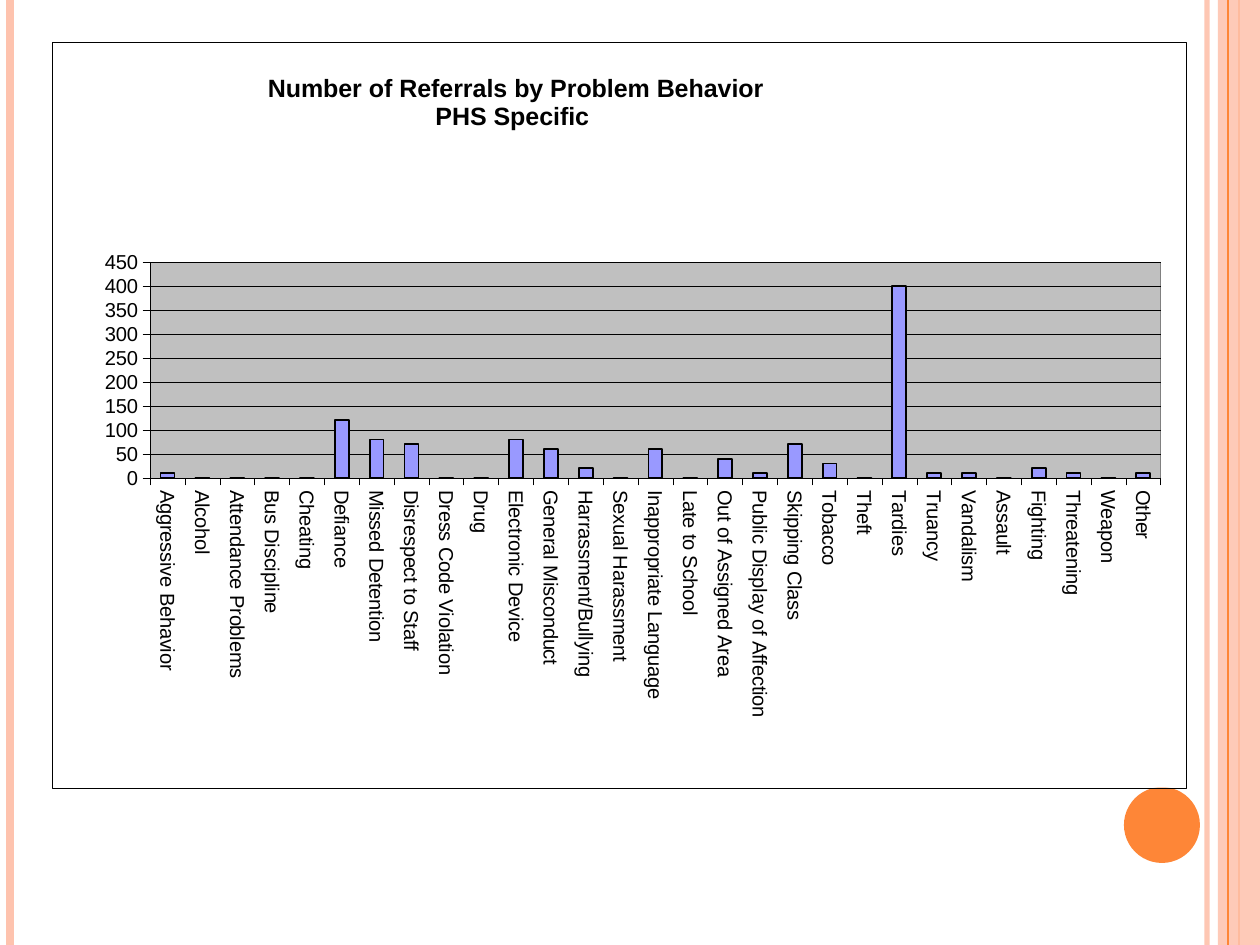
from lxml import etree
from pptx import Presentation
from pptx.chart.data import CategoryChartData
from pptx.dml.color import RGBColor
from pptx.enum.chart import XL_CHART_TYPE, XL_TICK_MARK
from pptx.enum.shapes import MSO_CONNECTOR, MSO_SHAPE
from pptx.enum.text import PP_ALIGN
from pptx.oxml import parse_xml
from pptx.oxml.ns import nsdecls, qn
from pptx.util import Pt

PX = 914400 / 126
WIDTH, HEIGHT = 1260, 945
CHART_W, CHART_H = 1134, 746
FONT = "Arial"
COLORS = {"peach": "FEC3AE", "orange": "FE8637", "black": "000000", "white": "FFFFFF",
          "plot": "C0C0C0", "plot_edge": "808080", "bar": "9999FF"}

REFERRALS = [
    ("Aggressive Behavior", 10), ("Alcohol", 0), ("Attendance Problems", 0),
    ("Bus Discipline", 0), ("Cheating", 0), ("Defiance", 120),
    ("Missed Detention", 80), ("Disrespect to Staff", 70),
    ("Dress Code Violation", 0), ("Drug", 0), ("Electronic Device", 80),
    ("General Misconduct", 60), ("Harrassment/Bullying", 20),
    ("Sexual Harassment", 0), ("Inappropriate Language", 60),
    ("Late to School", 0), ("Out of Assigned Area", 40),
    ("Public Display of Affection", 10), ("Skipping Class", 70),
    ("Tobacco", 30), ("Theft", 0), ("Tardies", 400), ("Truancy", 10),
    ("Vandalism", 10), ("Assault", 0), ("Fighting", 20), ("Threatening", 10),
    ("Weapon ", 0), ("Other", 10),
]


def px(n):
    return round(n * PX)


def rgb(name):
    return RGBColor.from_string(COLORS[name])


def set_alpha(fill_element, percent):
    color = fill_element.find(".//" + qn("a:srgbClr"))
    etree.SubElement(color, qn("a:alpha")).set("val", str(percent * 1000))


def add_stripe(slide, x, color, width, alpha=100):
    """Full-height vertical line."""
    c = slide.shapes.add_connector(MSO_CONNECTOR.STRAIGHT, px(x), 0, px(x), px(HEIGHT))
    c.line.color.rgb = rgb(color)
    c.line.width = Pt(width)
    sp_pr = c._element.spPr
    etree.SubElement(sp_pr, qn("a:effectLst"))
    if alpha < 100:
        set_alpha(sp_pr, alpha)


def add_filled(slide, kind, x, y, w, h, color, alpha=100):
    sp = slide.shapes.add_shape(kind, px(x), px(y), px(w), px(h))
    sp.shadow.inherit = False
    sp.fill.solid()
    sp.fill.fore_color.rgb = rgb(color)
    sp.line.fill.background()
    if alpha < 100:
        set_alpha(sp._element.spPr, alpha)


def style_line(line, color, width):
    line.color.rgb = rgb(color)
    line.width = Pt(width)


def style_font(font, size, bold=False):
    font.name = FONT
    font.size = Pt(size)
    font.bold = bold
    font.color.rgb = rgb("black")


def area_format(fill, border):
    """Fill and thin border for the chart area or the plot area."""
    return parse_xml(
        f'<c:spPr {nsdecls("c", "a")}>'
        f'<a:solidFill><a:srgbClr val="{COLORS[fill]}"/></a:solidFill>'
        f'<a:ln w="3175"><a:solidFill><a:srgbClr val="{COLORS[border]}"/></a:solidFill></a:ln>'
        '</c:spPr>')


def manual_layout(x, y, w=None, h=None):
    """Place a chart part, given in px from the chart's corner."""
    target = '<c:layoutTarget val="inner"/>' if w else ""
    size = f'<c:w val="{w / CHART_W}"/><c:h val="{h / CHART_H}"/>' if w else ""
    return parse_xml(
        f'<c:layout {nsdecls("c")}><c:manualLayout>{target}'
        '<c:xMode val="edge"/><c:yMode val="edge"/>'
        f'<c:x val="{x / CHART_W}"/><c:y val="{y / CHART_H}"/>{size}'
        '</c:manualLayout></c:layout>')


def drop_layout(parent):
    for old in parent.findall(qn("c:layout")):
        parent.remove(old)


def add_chart_title(chart, lines):
    tf = chart.chart_title.text_frame
    for i, text in enumerate(lines):
        p = tf.paragraphs[0] if i == 0 else tf.add_paragraph()
        p.alignment = PP_ALIGN.CENTER
        r = p.add_run()
        r.text = text
        style_font(r.font, 14.25, bold=True)
    title = chart.chart_title._element
    drop_layout(title)
    title.find(qn("c:tx")).addnext(manual_layout(205, 27))


def style_axis(axis):
    axis.major_tick_mark = XL_TICK_MARK.OUTSIDE
    axis.minor_tick_mark = XL_TICK_MARK.NONE
    style_font(axis.tick_labels.font, 11.5)
    style_line(axis.format.line, "black", 0.25)


def add_referral_chart(slide):
    data = CategoryChartData()
    data.categories = [name for name, _ in REFERRALS]
    data.add_series("Series 1", [count for _, count in REFERRALS])
    chart = slide.shapes.add_chart(XL_CHART_TYPE.COLUMN_CLUSTERED, px(52), px(42),
                                   px(CHART_W), px(CHART_H), data).chart
    chart.has_legend = False
    style_font(chart.font, 11.5)
    add_chart_title(chart, [" Number of Referrals by Problem Behavior", "PHS Specific"])

    # Axes
    for axis in (chart.category_axis, chart.value_axis):
        style_axis(axis)
    labels = chart.category_axis._element.find(qn("c:txPr")).find(qn("a:bodyPr"))
    labels.set("rot", "5400000")
    labels.set("vert", "horz")
    values = chart.value_axis
    values.minimum_scale, values.maximum_scale, values.major_unit = 0, 450, 50
    values.has_major_gridlines = True
    style_line(values.major_gridlines.format.line, "black", 0.25)

    # Columns
    plot = chart.plots[0]
    plot.gap_width = 150
    plot.vary_by_categories = False
    columns = plot.series[0].format
    columns.fill.solid()
    columns.fill.fore_color.rgb = rgb("bar")
    style_line(columns.line, "black", 1)

    # Chart area and plot area
    chart_xml = chart._chartSpace.find(qn("c:chart"))
    chart_xml.addnext(area_format("white", "black"))
    plot_area = chart_xml.find(qn("c:plotArea"))
    drop_layout(plot_area)
    plot_area.insert(0, manual_layout(98, 220, 1011, 216))
    plot_area.append(area_format("plot", "plot_edge"))


def main():
    prs = Presentation()
    prs.slide_width, prs.slide_height = px(WIDTH), px(HEIGHT)
    s = prs.slides.add_slide(prs.slide_layouts[6])

    # Side decoration
    add_stripe(s, 1207, "peach", 3, alpha=93)
    add_stripe(s, 10, "peach", 4.5)
    add_stripe(s, 1239, "orange", 1.5)
    add_filled(s, MSO_SHAPE.RECTANGLE, 1218, 0, 42, HEIGHT, "peach", alpha=87)
    add_stripe(s, 1228, "orange", 0.75)
    add_filled(s, MSO_SHAPE.OVAL, 1124, 787, 76, 76, "orange")

    add_referral_chart(s)
    prs.save("out.pptx")


if __name__ == "__main__":
    main()
